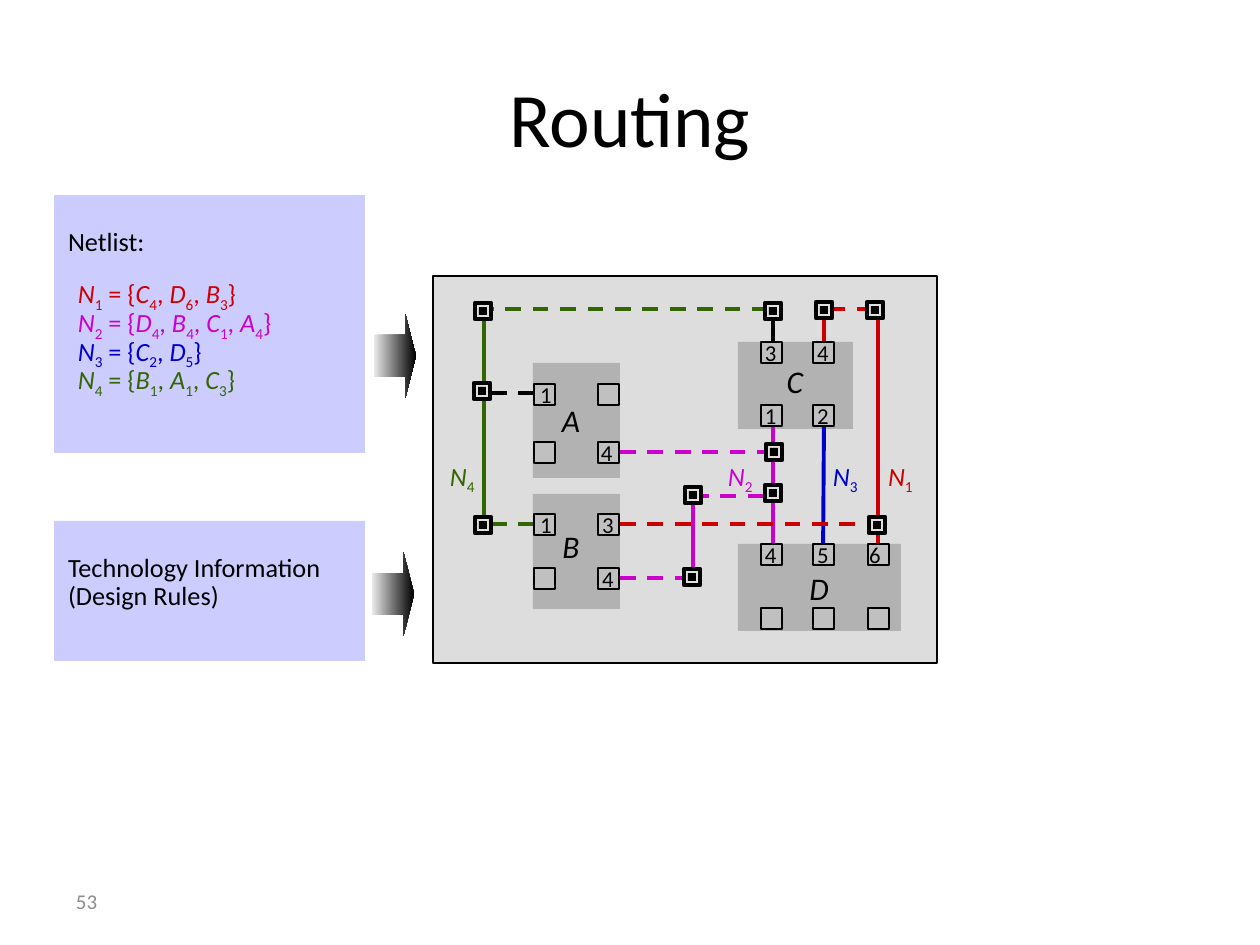
from itertools import groupby

from lxml.etree import SubElement
from pptx import Presentation
from pptx.dml.color import RGBColor
from pptx.enum.dml import MSO_LINE
from pptx.enum.shapes import MSO_CONNECTOR, MSO_SHAPE
from pptx.enum.text import MSO_ANCHOR, PP_ALIGN
from pptx.oxml.ns import qn
from pptx.util import Emu, Pt

FONT = "Calibri"
BLACK, RED, MAGENTA, BLUE, GREEN = "000000", "CC0000", "CC00CC", "0000CC", "336600"
PAD, VIA, CORE = 21, 16, 8
INSETS = (14, 6, 14, 6)

NETS = [("N1 = {C4, D6, B3}", RED), ("N2 = {D4, B4, C1, A4}", MAGENTA),
        ("N3 = {C2, D5}", BLUE), ("N4 = {B1, A1, C3}", GREEN)]

# name, block rectangle, centre of the name
BLOCKS = [("A", (533, 363, 87, 115), (571, 420)),
          ("B", (533, 494, 87, 115), (571, 546)),
          ("C", (738, 342, 115, 87), (795, 381)),
          ("D", (738, 544, 163, 87), (819, 588))]

# column positions, row position, pin numbers, shift of each number in its pad
PAD_ROWS = [((534, 598), 384, ("1", ""), (6, 3)),
            ((534, 598), 442, ("", "4"), (6, 3)),
            ((534, 598), 514, ("1", "3"), (6, 4)),
            ((534, 598), 568, ("", "4"), (6, 4)),
            ((761, 813), 342, ("3", "4"), (4, 4)),
            ((761, 813), 405, ("1", "2"), (4, 4)),
            ((761, 813, 868), 544, ("4", "5", "6"), (4, 4, 1)),
            ((761, 813, 868), 608, ("", "", ""), (0, 0, 0))]

# start, end, colour, dashed, ends that carry a dot
WIRES = [((534, 393), (483, 393), BLACK, True, "tail"),
         ((824, 427), (823, 564), BLUE, False, ""),
         ((773, 427), (773, 558), MAGENTA, False, ""),
         ((620, 452), (773, 452), MAGENTA, True, "tail"),
         ((620, 578), (693, 578), MAGENTA, True, "tail"),
         ((773, 342), (773, 309), BLACK, False, ""),
         ((773, 309), (484, 309), GREEN, True, "head tail"),
         ((484, 309), (484, 524), GREEN, False, ""),
         ((534, 524), (484, 524), GREEN, True, "tail"),
         ((693, 578), (693, 496), MAGENTA, False, "head tail"),
         ((693, 496), (773, 496), MAGENTA, True, "tail"),
         ((620, 524), (878, 524), RED, True, "tail"),
         ((878, 547), (878, 309), RED, False, ""),
         ((824, 342), (824, 309), RED, False, ""),
         ((878, 309), (824, 309), RED, True, "head tail")]

VIAS = [(475, 303), (474, 383), (475, 517), (765, 303), (766, 444), (765, 485),
        (867, 302), (816, 302), (869, 517), (684, 569), (685, 487)]

WIRE_LABELS = [("N4", 436, GREEN), ("N2", 714, MAGENTA),
               ("N3", 819, BLUE), ("N1", 874, RED)]


def px(length):
    return Emu(round(length * 914400 / 126))


def color(value):
    return RGBColor.from_string(value)


def add_shape(page, area, fill, line=None, width=0.75, kind=MSO_SHAPE.RECTANGLE):
    shape = page.shapes.add_shape(kind, *map(px, area))
    shape.shadow.inherit = False
    if fill:
        shape.fill.solid()
        shape.fill.fore_color.rgb = color(fill)
    if line:
        shape.line.color.rgb = color(line)
        shape.line.width = Pt(width)
    else:
        shape.line.fill.background()
    return shape


def set_frame(shape, insets, anchor=MSO_ANCHOR.TOP, wrap=True):
    frame = shape.text_frame
    frame.margin_left, frame.margin_top, frame.margin_right, frame.margin_bottom = map(px, insets)
    frame.vertical_anchor = anchor
    frame.word_wrap = wrap
    return frame


def add_box(page, area, insets=INSETS, **options):
    return set_frame(page.shapes.add_textbox(*map(px, area)), insets, **options)


def add_span(para, text, size, shade, italic=False):
    span = para.add_run()
    span.text = text
    span.font.name = FONT
    span.font.size = Pt(size)
    span.font.italic = italic
    span.font.color.rgb = color(shade)
    return span


def add_net(para, text, shade):
    """Letters are italic, digits are subscripts."""
    def kind(char):
        return "name" if char.isalpha() else "index" if char.isdigit() else "sign"

    for part, chars in groupby(text, kind):
        span = add_span(para, "".join(chars), 15, shade, part == "name")
        if part == "index":
            span.font._element.set("baseline", "-25000")


def add_panel(page, area, lines):
    frame = set_frame(add_shape(page, area, "CCCCFF"), (14, 34, 14, 6))
    para = frame.paragraphs[0]
    para.alignment = PP_ALIGN.LEFT
    para.line_spacing = 0.9
    for index, line in enumerate(lines):
        if index:
            para.add_line_break()
        add_span(para, line, 15, BLACK)


def add_arrow(page, left, top):
    arrow = add_shape(page, (left, top, 42, 84), None, kind=MSO_SHAPE.RIGHT_ARROW)
    arrow.adjustments[0], arrow.adjustments[1] = 0.5, 0.25
    arrow.fill.gradient()
    arrow.fill.gradient_angle = 0
    for stop, shade in zip(arrow.fill.gradient_stops, ("EAEAEA", BLACK)):
        stop.color.rgb = color(shade)


def add_wire(page, start, end, shade, dashed, dots):
    wire = page.shapes.add_connector(MSO_CONNECTOR.STRAIGHT, *map(px, start + end))
    wire.line.color.rgb = color(shade)
    wire.line.width = Pt(2.25)
    if dashed:
        wire.line.dash_style = MSO_LINE.DASH
    properties = wire._element.spPr
    for dot in dots.split():
        SubElement(properties.find(qn("a:ln")), qn(f"a:{dot}End"), type="oval")
    SubElement(properties, qn("a:effectLst"))


def add_block(page, name, area, center):
    add_shape(page, area, "B2B2B2")
    frame = add_box(page, (center[0] - 57, center[1] - 21, 114, 42), anchor=MSO_ANCHOR.MIDDLE)
    frame.paragraphs[0].alignment = PP_ALIGN.CENTER
    add_span(frame.paragraphs[0], name, 18, BLACK, True)


def add_pad(page, left, top, number, shift):
    add_shape(page, (left, top, PAD, PAD), "C0C0C0", BLACK)
    if number:
        frame = add_box(page, (left + shift, top - 3, 22, 26), (0, 0, 0, 0))
        add_span(frame.paragraphs[0], number, 13, BLACK)


def add_via(page, left, top):
    gap = (VIA - CORE) / 2
    add_shape(page, (left, top, VIA, VIA), "DFDFDF", BLACK, 2.5)
    add_shape(page, (left + gap, top + gap, CORE, CORE), BLACK)


def main():
    deck = Presentation()
    deck.slide_width, deck.slide_height = px(1260), px(945)
    page = deck.slides.add_slide(deck.slide_layouts[6])

    # Title and page number
    title = add_box(page, (63, 38, 1134, 157), anchor=MSO_ANCHOR.MIDDLE).paragraphs[0]
    title.alignment = PP_ALIGN.CENTER
    add_span(title, "Routing", 44, BLACK)
    number = add_box(page, (63, 876, 294, 50), (13, 6, 13, 6), anchor=MSO_ANCHOR.MIDDLE)
    add_span(number.paragraphs[0], "53", 12, "8C8C8C")

    # Inputs of the routing step
    add_panel(page, (54, 195, 311, 258), ["Netlist:"])
    add_panel(page, (54, 521, 311, 140), ["Technology Information ", "(Design Rules)"])
    netlist = add_box(page, (64, 275, 353, 161))
    for index, (text, shade) in enumerate(NETS):
        para = netlist.add_paragraph() if index else netlist.paragraphs[0]
        para.line_spacing = 0.8
        add_net(para, text, shade)
    add_arrow(page, 374, 314)
    add_arrow(page, 372, 552)

    # Routed board
    add_shape(page, (433, 276, 504, 387), "DDDDDD", BLACK)
    for block in BLOCKS:
        add_block(page, *block)
    for wire in WIRES:
        add_wire(page, *wire)
    for columns, top, numbers, shifts in PAD_ROWS:
        for left, pin, shift in zip(columns, numbers, shifts):
            add_pad(page, left, top, pin, shift)
    for text, left, shade in WIRE_LABELS:
        add_net(add_box(page, (left, 454, 55, 44), wrap=False).paragraphs[0], text, shade)
    for via in VIAS:
        add_via(page, *via)

    deck.save("out.pptx")


if __name__ == "__main__":
    main()
